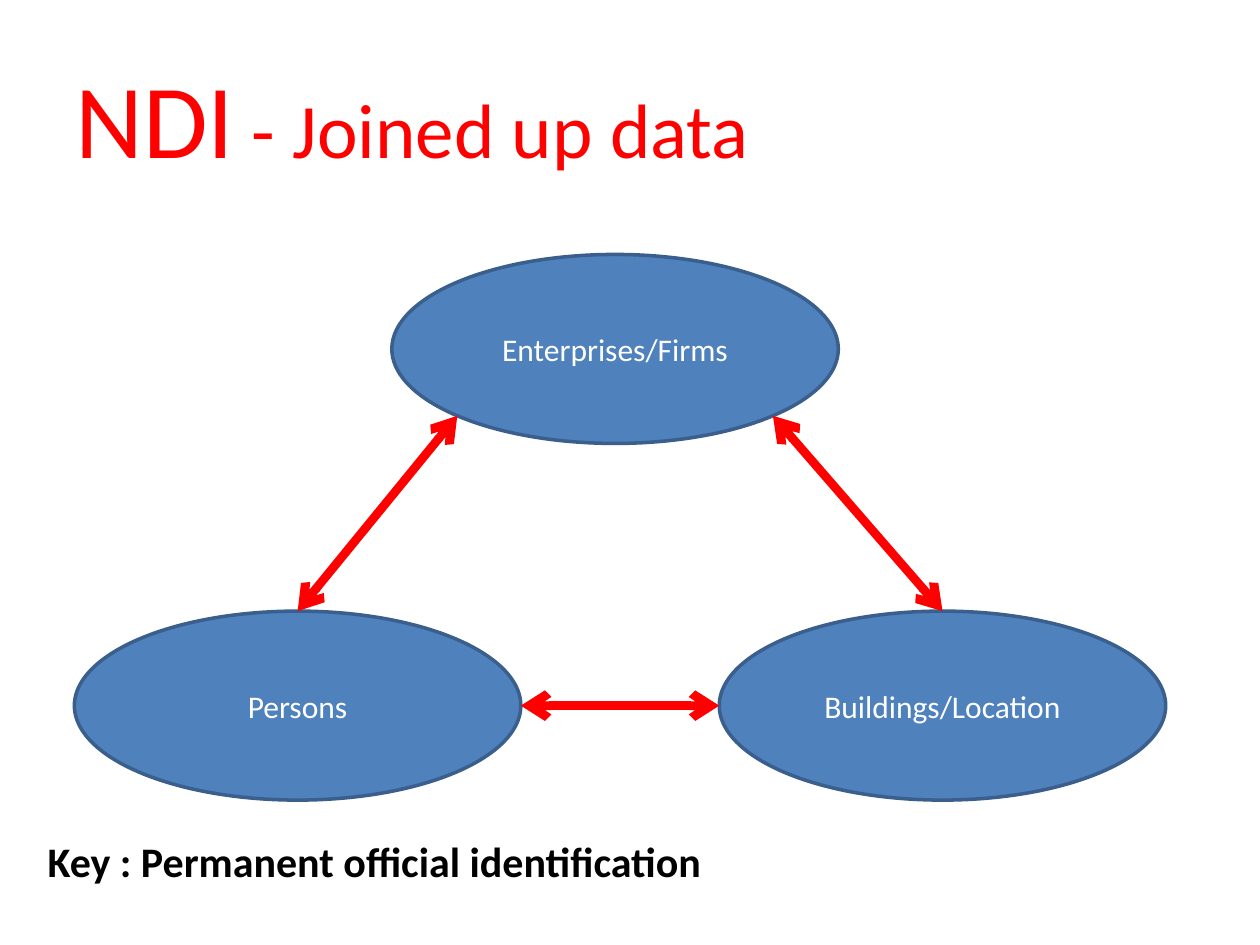
"""Build the NDI slide: three linked data registers and their key."""
from math import sqrt

from lxml.etree import SubElement
from pptx import Presentation
from pptx.dml.color import RGBColor
from pptx.enum.shapes import MSO_CONNECTOR as Connector, MSO_SHAPE as Shape
from pptx.enum.text import MSO_ANCHOR as Anchor, MSO_AUTO_SIZE as AutoSize, PP_ALIGN as Align
from pptx.oxml.ns import qn
from pptx.util import Cm, Pt

RED = RGBColor(0xFF, 0x00, 0x00)
BLUE = RGBColor(0x4F, 0x81, 0xBD)
DARK_BLUE = RGBColor(0x3A, 0x5F, 0x8C)
WHITE = RGBColor(0xFF, 0xFF, 0xFF)
BLACK = RGBColor(0x00, 0x00, 0x00)
FONT = "Calibri"

TITLE_RUNS = [("NDI", 60), (" - Joined up data", 44)]
KEY = "Key : Permanent official identification"
REGISTER_WIDTH, REGISTER_HEIGHT = 9, 3.81
REGISTERS = {
    "Enterprises/Firms": (7.9, 5.13),
    "Buildings/Location": (14.5, 12.32),
    "Persons": (1.5, 12.32),
}
DIAGONAL = 1 / sqrt(2)
SITES = {
    "top": (0, -1),
    "left": (-1, 0),
    "right": (1, 0),
    "lower left": (-DIAGONAL, DIAGONAL),
    "lower right": (DIAGONAL, DIAGONAL),
}
LINKS = [
    ("Enterprises/Firms", "lower left", "Persons", "top"),
    ("Enterprises/Firms", "lower right", "Buildings/Location", "top"),
    ("Persons", "right", "Buildings/Location", "left"),
]


def add_run(paragraph, text, size, color, bold=False):
    run = paragraph.add_run()
    run.text = text
    run.font.name = FONT
    run.font.size = Pt(size)
    run.font.bold = bold
    run.font.color.rgb = color


def add_title(slide):
    title = slide.shapes.title
    title.left, title.top, title.width, title.height = Cm(1.27), Cm(0.76), Cm(22.86), Cm(3.18)
    title.text_frame.vertical_anchor = Anchor.MIDDLE
    paragraph = title.text_frame.paragraphs[0]
    paragraph.alignment = Align.JUSTIFY
    for text, size in TITLE_RUNS:
        add_run(paragraph, text, size, RED)


def add_register(slide, name, left, top):
    ellipse = slide.shapes.add_shape(
        Shape.OVAL, Cm(left), Cm(top), Cm(REGISTER_WIDTH), Cm(REGISTER_HEIGHT))
    ellipse.shadow.inherit = False
    ellipse.fill.solid()
    ellipse.fill.fore_color.rgb = BLUE
    ellipse.line.color.rgb = DARK_BLUE
    ellipse.line.width = Pt(2)
    ellipse.text_frame.vertical_anchor = Anchor.MIDDLE
    paragraph = ellipse.text_frame.paragraphs[0]
    paragraph.alignment = Align.CENTER
    add_run(paragraph, name, 18, WHITE)


def site_point(name, site):
    left, top = REGISTERS[name]
    across, down = SITES[site]
    return (Cm(left + REGISTER_WIDTH / 2 * (1 + across)),
            Cm(top + REGISTER_HEIGHT / 2 * (1 + down)))


def add_link(slide, start, start_site, end, end_site):
    link = slide.shapes.add_connector(
        Connector.STRAIGHT, *site_point(start, start_site), *site_point(end, end_site))
    link.line.color.rgb = RED
    link.line.width = Pt(5)
    properties = link._element.spPr
    for tag in ("a:headEnd", "a:tailEnd"):
        SubElement(properties.find(qn("a:ln")), qn(tag), type="arrow")
    SubElement(properties, qn("a:effectLst"))


def add_key(slide):
    box = slide.shapes.add_textbox(Cm(0.71), Cm(16.71), Cm(18.39), Cm(1.27))
    box.text_frame.word_wrap = True
    box.text_frame.auto_size = AutoSize.SHAPE_TO_FIT_TEXT
    add_run(box.text_frame.paragraphs[0], KEY, 24, BLACK, bold=True)


def main():
    presentation = Presentation()
    presentation.slide_width, presentation.slide_height = Cm(25.4), Cm(19.05)
    slide = presentation.slides.add_slide(presentation.slide_layouts[5])
    add_title(slide)
    for name, (left, top) in REGISTERS.items():
        add_register(slide, name, left, top)
    for link in LINKS:
        add_link(slide, *link)
    add_key(slide)
    presentation.save("out.pptx")


if __name__ == "__main__":
    main()
